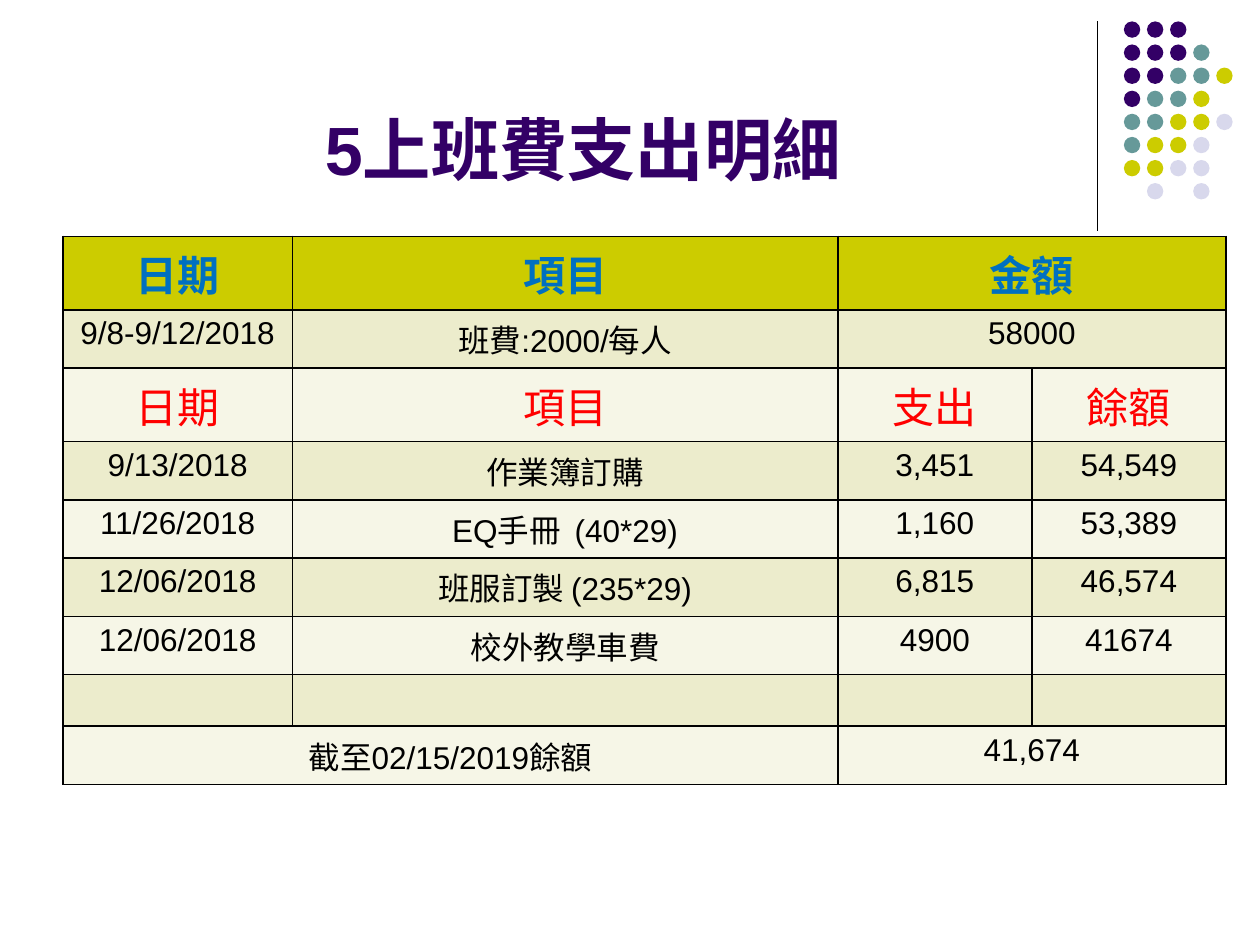
"""Build the class fee expense slide: title, dot grid and ledger table."""
from lxml import etree
from pptx import Presentation, util as u
from pptx.dml.color import RGBColor
from pptx.enum import shapes, text
from pptx.oxml import ns

WIDE, HIGH = 10, 7.5
HUES = {"plum": "330066", "teal": "669999", "lime": "CCCC00", "mist": "D8D8EC",
        "sand": "ECECCC", "pale": "F6F6E7", "blue": "0070C0", "red": "FF0000",
        "black": "000000"}
DOTS = ["ppp", "pppt", "ppttl", "pttl", "ttllm", "tllm", "llmm", " m m"]
KEYS = {"p": "plum", "t": "teal", "l": "lime", "m": "mist"}
COLS = [1.82, 4.33, 1.54, 1.54]
ROWS = [
    ["日期", "項目", "金額", ""],
    ["9/8-9/12/2018", "班費:2000/每人", "58000", ""],
    ["日期", "項目", "支出", "餘額"],
    ["9/13/2018", "作業簿訂購", "3,451", "54,549"],
    ["11/26/2018", "EQ手冊  (40*29)", "1,160", "53,389"],
    ["12/06/2018", "班服訂製 (235*29)", "6,815", "46,574"],
    ["12/06/2018", "校外教學車費", "4900", "41674"],
    ["", "", "", ""],
    ["截至02/15/2019餘額", "", "41,674", ""],
]
SPANS = [(0, 2), (1, 2), (8, 0), (8, 2)]
BODY = {"size": u.Pt(18), "name": "Arial", "bold": False, "hue": "black"}
LOOKS = {0: {"size": u.Pt(24), "bold": True, "hue": "blue"},
         2: {"size": u.Pt(24), "hue": "red"}}


def tint(name):
    """Return the named colour."""
    return RGBColor.from_string(HUES[name])


def style(para, look):
    """Centre a paragraph and apply a dict of font values."""
    para.alignment = text.PP_ALIGN.CENTER
    for key, val in look.items():
        if key == "hue":
            para.font.color.rgb = tint(val)
        else:
            setattr(para.font, key, val)


def add_title(slide, words):
    """Place and format the title placeholder."""
    title = slide.shapes.title
    box = {"left": 0.05 * WIDE, "top": 0.112 * HIGH,
           "width": 0.825 * WIDE, "height": 0.095 * HIGH}
    for key, val in box.items():
        setattr(title, key, u.Inches(val))
    frame = title.text_frame
    frame.text = words
    frame.auto_size = text.MSO_AUTO_SIZE.NONE
    frame.vertical_anchor = text.MSO_ANCHOR.BOTTOM
    style(frame.paragraphs[0],
          {**BODY, "size": u.Pt(39), "bold": True, "hue": "plum"})


def add_rule(slide, left, top, end):
    """Draw a thin upright line."""
    rule = slide.shapes.add_connector(
        shapes.MSO_CONNECTOR.STRAIGHT,
        *(u.Inches(n) for n in (left, top, left, end)))
    rule.line.color.rgb = tint("black")
    rule.line.width = u.Pt(0.75)
    etree.SubElement(rule._element.spPr, ns.qn("a:effectLst"))


def add_dots(slide, left, top, step, size):
    """Draw the grid of coloured dots as one group."""
    group = slide.shapes.add_group_shape()
    for row, line in enumerate(DOTS):
        for col, key in enumerate(line):
            if key == " ":
                continue
            dot = group.shapes.add_shape(
                shapes.MSO_SHAPE.OVAL, u.Inches(left + col * step),
                u.Inches(top + row * step), u.Inches(size), u.Inches(size))
            dot.shadow.inherit = False
            dot.fill.solid()
            dot.fill.fore_color.rgb = tint(KEYS[key])
            dot.line.fill.background()


def edge(cell):
    """Give a cell a black border on all four sides."""
    props = cell._tc.get_or_add_tcPr()
    for side in ("lnL", "lnR", "lnT", "lnB"):
        line = etree.SubElement(props, ns.qn("a:" + side), w=str(u.Pt(1)))
        fill = etree.SubElement(line, ns.qn("a:solidFill"))
        etree.SubElement(fill, ns.qn("a:srgbClr"), val=HUES["black"])


def add_ledger(slide):
    """Add the table of dates, items and amounts."""
    high = 0.41
    table = slide.shapes.add_table(
        len(ROWS), len(COLS), u.Inches(0.05 * WIDE), u.Inches(0.25 * HIGH),
        u.Inches(sum(COLS)), u.Inches(high * len(ROWS))).table
    for col, wide in zip(table.columns, COLS):
        col.width = u.Inches(wide)
    for row, words in enumerate(ROWS):
        table.rows[row].height = u.Inches(high)
        back = "lime" if row == 0 else "sand" if row % 2 else "pale"
        for col, word in enumerate(words):
            cell = table.cell(row, col)
            cell.text = word
            style(cell.text_frame.paragraphs[0], {**BODY, **LOOKS.get(row, {})})
            edge(cell)
            cell.fill.solid()
            cell.fill.fore_color.rgb = tint(back)
    for row, col in SPANS:
        table.cell(row, col).merge(table.cell(row, col + 1))


def main():
    """Build and save the slide."""
    deck = Presentation()
    deck.slide_width, deck.slide_height = u.Inches(WIDE), u.Inches(HIGH)
    slide = deck.slides.add_slide(deck.slide_layouts[5])
    add_rule(slide, 8.71, 0.17, 1.83)
    add_dots(slide, 8.92, 0.17, 0.55 / 3, 0.13)
    add_title(slide, "5上班費支出明細")
    add_ledger(slide)
    deck.save("out.pptx")


if __name__ == "__main__":
    main()
